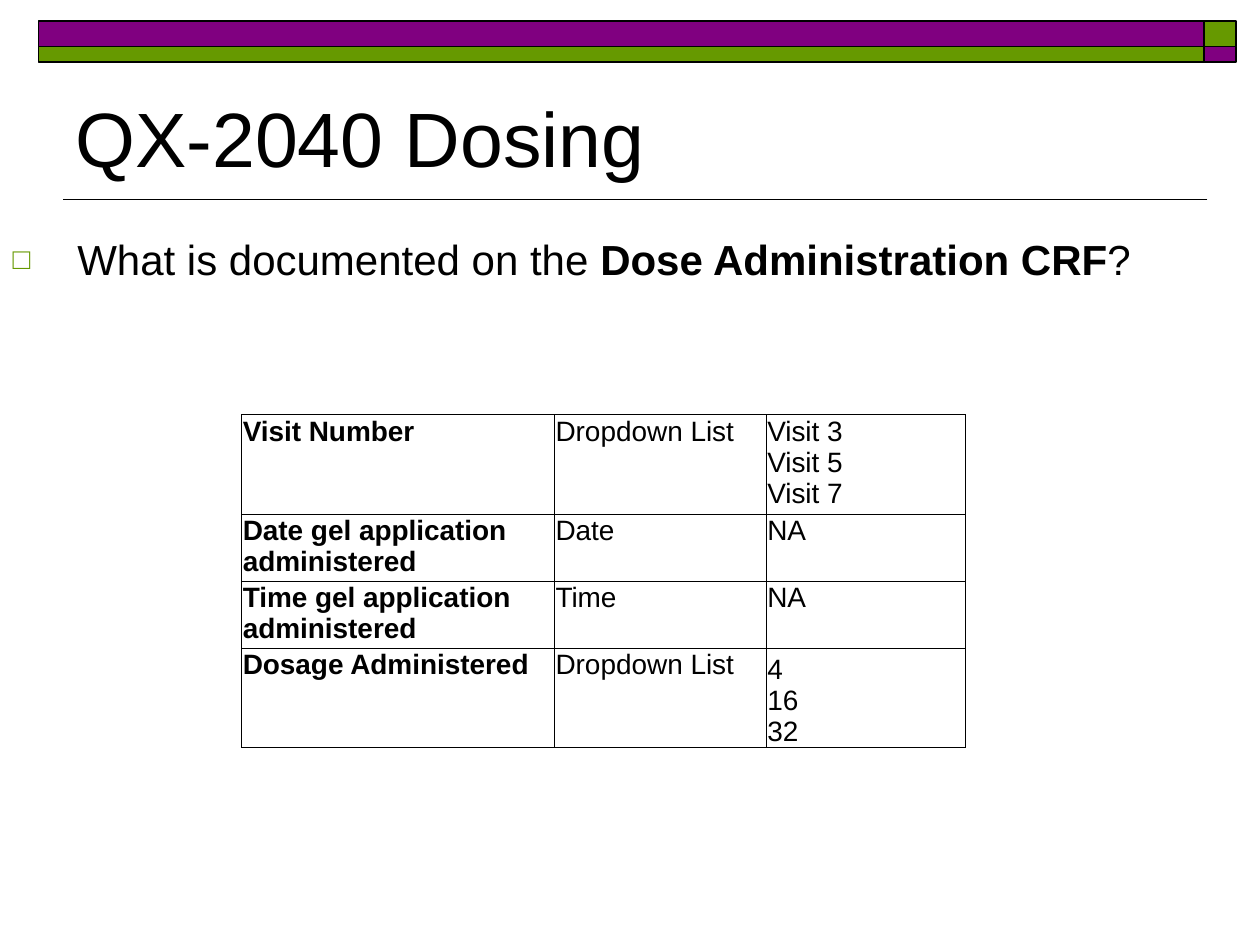
from lxml.etree import SubElement
from pptx import Presentation
from pptx.dml.color import RGBColor
from pptx.enum.shapes import MSO_CONNECTOR, MSO_SHAPE
from pptx.enum.text import MSO_ANCHOR, MSO_AUTO_SIZE, PP_ALIGN
from pptx.oxml import parse_xml
from pptx.oxml.ns import nsdecls, qn
from pptx.util import Pt

BLACK = RGBColor(0x00, 0x00, 0x00)
GREEN = RGBColor(0x66, 0x99, 0x00)
PURPLE = RGBColor(0x80, 0x00, 0x80)


def format_runs(paragraph, size, bold=False):
    for run in paragraph.runs:
        run.font.name = "Arial"
        run.font.size = Pt(size)
        run.font.bold = bold
        run.font.color.rgb = BLACK


def place(shape, left, top, width, height):
    shape.left, shape.top = Pt(left), Pt(top)
    shape.width, shape.height = Pt(width), Pt(height)


presentation = Presentation()
presentation.slide_width, presentation.slide_height = Pt(720), Pt(540)
slide = presentation.slides.add_slide(presentation.slide_layouts[1])

# Rule under the title
rule = slide.shapes.add_connector(MSO_CONNECTOR.STRAIGHT, Pt(690), Pt(114), Pt(36), Pt(114))
rule.line.color.rgb = BLACK
rule.line.width = Pt(1)
SubElement(rule._element.spPr, qn("a:effectLst"))

# Header band: two rows, with the colours swapped in the end squares
for top, height, long_color, end_color in [(12, 14.6, PURPLE, GREEN), (26.6, 9, GREEN, PURPLE)]:
    for left, width, color in [(688.2, 18, end_color), (22, 666.2, long_color)]:
        bar = slide.shapes.add_shape(MSO_SHAPE.RECTANGLE, Pt(left), Pt(top), Pt(width), Pt(height))
        bar.shadow.inherit = False
        bar.fill.solid()
        bar.fill.fore_color.rgb = color
        bar.line.color.rgb = BLACK
        bar.line.width = Pt(1)

# Title
title = slide.shapes.title
place(title, 36, 42, 648, 66)
title.text_frame.text = "QX-2040 Dosing"
title.text_frame.vertical_anchor = MSO_ANCHOR.BOTTOM
title.text_frame.auto_size = MSO_AUTO_SIZE.NONE
title.text_frame.paragraphs[0].alignment = PP_ALIGN.LEFT
format_runs(title.text_frame.paragraphs[0], 44)

# Question
body = slide.placeholders[1]
place(body, 0, 130, 720, 86)
body.text_frame.auto_size = MSO_AUTO_SIZE.NONE
question = body.text_frame.paragraphs[0]
for text in ["What is documented on the ", "Dose Administration CRF", "?"]:
    question.add_run().text = text
format_runs(question, 24)
question.runs[1].font.bold = True
question.space_before = Pt(4.8)
properties = question._p.get_or_add_pPr()
properties.set("marL", str(Pt(37)))
properties.set("indent", str(-Pt(37)))
bullet_color = SubElement(properties, qn("a:buClr"))
SubElement(bullet_color, qn("a:srgbClr"), val=str(GREEN))
SubElement(properties, qn("a:buSzPct"), val="70000")
SubElement(properties, qn("a:buFont"), typeface="Arial")
SubElement(properties, qn("a:buChar"), char="□")

# Table of form fields
fields = [
    ("Visit Number", "Dropdown List", "Visit 3\nVisit 5\nVisit 7"),
    ("Date gel application administered", "Date", "NA"),
    ("Time gel application administered", "Time", "NA"),
    ("Dosage Administered", "Dropdown List", "4\n16\n32"),
]
column_widths = [178.75, 121, 114]
row_heights = [57, 38.3, 38.3, 56.8]
table = slide.shapes.add_table(
    len(fields), len(column_widths), Pt(138), Pt(236.9),
    Pt(sum(column_widths)), Pt(sum(row_heights))).table
table.first_row = False
table.horz_banding = False
for column, width in zip(table.columns, column_widths):
    column.width = Pt(width)
for row, height, texts in zip(table.rows, row_heights, fields):
    row.height = Pt(height)
    for index, (cell, text) in enumerate(zip(row.cells, texts)):
        cell.margin_left = cell.margin_right = cell.margin_top = Pt(0.75)
        cell.margin_bottom = Pt(0)
        cell.vertical_anchor = MSO_ANCHOR.TOP
        cell.fill.background()
        cell.text_frame.text = text
        for paragraph in cell.text_frame.paragraphs:
            format_runs(paragraph, 16, bold=index == 0)
        for position, side in enumerate(["lnL", "lnR", "lnT", "lnB"]):
            border = parse_xml(
                f'<a:{side} {nsdecls("a")} w="{Pt(0.5)}"><a:solidFill>'
                f'<a:srgbClr val="{BLACK}"/></a:solidFill></a:{side}>')
            cell._tc.get_or_add_tcPr().insert(position, border)
table.cell(3, 2).vertical_anchor = MSO_ANCHOR.BOTTOM

presentation.save("out.pptx")
